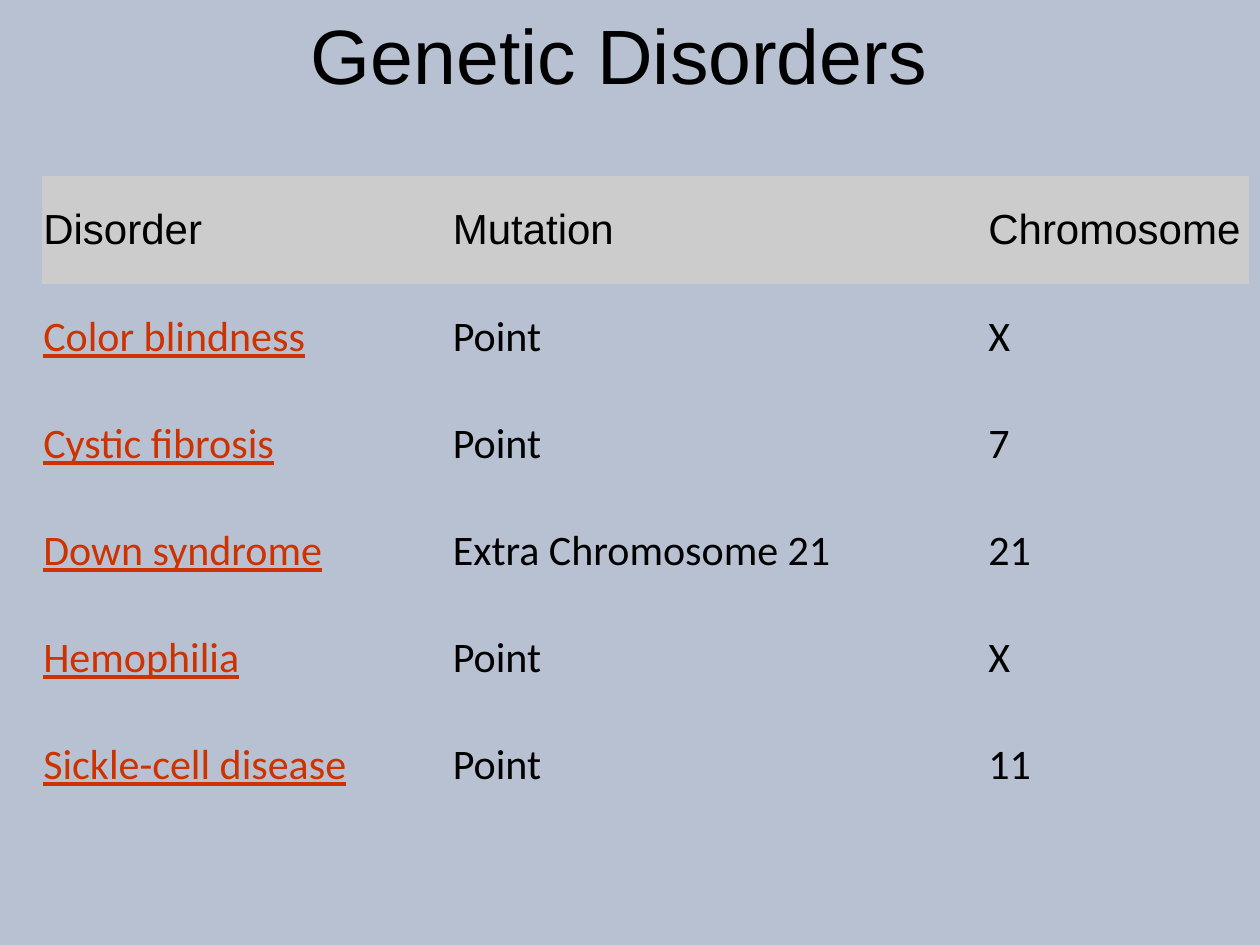
"""Build a slide that lists genetic disorders with their mutation and chromosome."""
from pptx import Presentation
from pptx.dml.color import RGBColor
from pptx.enum.text import MSO_ANCHOR, PP_ALIGN
from pptx.oxml.ns import qn
from pptx.util import Pt

TITLE = "Genetic Disorders "
HEADER = ("Disorder", "Mutation", "Chromosome")
DISORDERS = [
    ("Color blindness", "Point", "X"),
    ("Cystic fibrosis", "Point", "7"),
    ("Down syndrome", "Extra Chromosome 21", "21"),
    ("Hemophilia", "Point", "X"),
    ("Sickle-cell disease", "Point", "11"),
]
COLORS = {"background": "B8C1D2", "header": "CCCCCC", "text": "000000", "disorder": "CC3300"}
COLUMN_WIDTHS = (234, 306, 149.75)
ROW_HEIGHT = 61.2
TABLE_LEFT, TABLE_TOP = 24, 100.8
CELL_MARGIN = Pt(0.75)
PLAIN_TABLE_STYLE = "{2D5ABB26-0587-4C30-8999-92F81FD0307C}"


def color(name):
    return RGBColor.from_string(COLORS[name])


def format_text(text_frame, font_name, size, color_name, underline=False):
    for para in text_frame.paragraphs:
        for span in para.runs:
            span.font.name = font_name
            span.font.size = Pt(size)
            span.font.bold = False
            span.font.underline = underline
            span.font.color.rgb = color(color_name)


def add_title(page):
    title = page.shapes.title
    title.left, title.top, title.width, title.height = Pt(36), Pt(1.5), Pt(648), Pt(58.5)
    title.text_frame.text = TITLE
    title.text_frame.vertical_anchor = MSO_ANCHOR.MIDDLE
    title.text_frame.paragraphs[0].alignment = PP_ALIGN.CENTER
    format_text(title.text_frame, "Arial", 44, "text")


def fill_cell(cell, text, is_header, is_disorder):
    cell.text_frame.text = text
    cell.vertical_anchor = MSO_ANCHOR.MIDDLE
    cell.margin_left = cell.margin_right = CELL_MARGIN
    cell.margin_top = cell.margin_bottom = CELL_MARGIN
    if is_header:
        cell.fill.solid()
        cell.fill.fore_color.rgb = color("header")
    else:
        cell.fill.background()
    font_name = "Arial" if is_header else "Calibri"
    color_name = "disorder" if is_disorder else "text"
    format_text(cell.text_frame, font_name, 24, color_name, is_disorder)


def add_disorder_table(page):
    rows = [HEADER, *DISORDERS]
    frame = page.shapes.add_table(
        len(rows), len(HEADER), Pt(TABLE_LEFT), Pt(TABLE_TOP),
        Pt(sum(COLUMN_WIDTHS)), Pt(ROW_HEIGHT * len(rows)))
    table = frame.table
    table.first_row = table.horz_banding = False
    frame.element.find(".//" + qn("a:tableStyleId")).text = PLAIN_TABLE_STYLE
    for column, width in zip(table.columns, COLUMN_WIDTHS):
        column.width = Pt(width)
    for row_index, texts in enumerate(rows):
        table.rows[row_index].height = Pt(ROW_HEIGHT)
        is_header = row_index == 0
        for column_index, text in enumerate(texts):
            is_disorder = column_index == 0 and not is_header
            fill_cell(table.cell(row_index, column_index), text, is_header, is_disorder)


def main():
    deck = Presentation()
    deck.slide_width, deck.slide_height = Pt(720), Pt(540)
    page = deck.slides.add_slide(deck.slide_layouts.get_by_name("Title Only"))
    page.background.fill.solid()
    page.background.fill.fore_color.rgb = color("background")
    add_disorder_table(page)
    add_title(page)
    deck.save("out.pptx")


if __name__ == "__main__":
    main()
